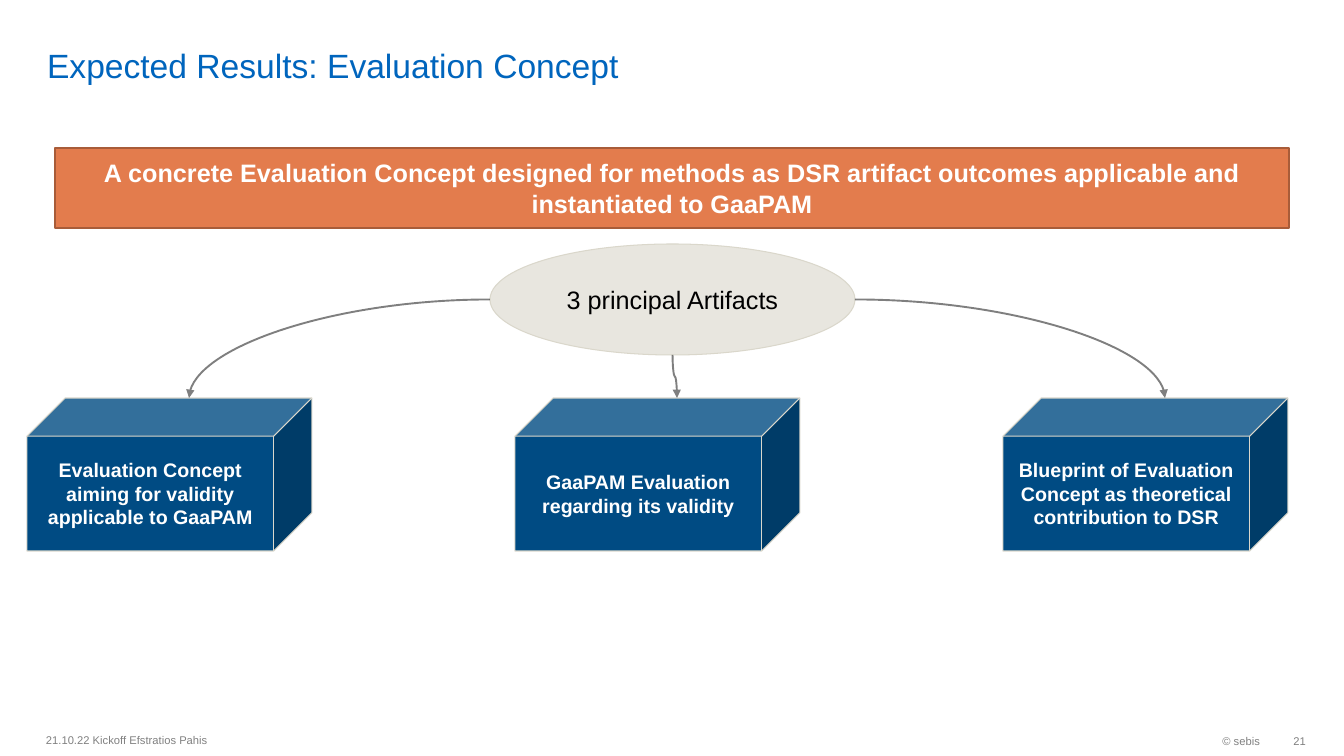
from lxml.etree import SubElement
from pptx import Presentation
from pptx.dml.color import RGBColor
from pptx.enum.shapes import MSO_CONNECTOR as Link, MSO_SHAPE as Preset
from pptx.enum.text import MSO_ANCHOR as Anchor, MSO_AUTO_SIZE as AutoSize, PP_ALIGN as Align
from pptx.oxml.ns import qn
from pptx.util import Emu, Pt

TITLE = "Expected Results: Evaluation Concept"
CLAIM = ("A concrete Evaluation Concept designed for methods as DSR artifact "
         "outcomes applicable and instantiated to GaaPAM")
HUB = "3 principal Artifacts"
ARTIFACTS = [
    "Evaluation Concept aiming for validity applicable to GaaPAM",
    "GaaPAM Evaluation regarding its validity",
    "Blueprint of Evaluation Concept as theoretical contribution to DSR",
]
# text, box (left, top, width, height), alignment, right inset
FOOTERS = [
    ("21.10.22 Kickoff Efstratios Pahis", (36, 724, 635, 32), Align.LEFT, 10),
    ("© sebis", (1034, 725, 236, 32), Align.RIGHT, 10),
    ("21", (1270, 725, 36, 32), Align.RIGHT, 0),
]

TITLE_BOX = (37, 5, 1167, 80)
CLAIM_BOX = (55, 148, 1234, 80)
HUB_BOX = (490, 244, 365, 111)
CUBE_LEFT, CUBE_TOP, CUBE_WIDTH, CUBE_HEIGHT = 27, 398, 285, 153
CUBE_STEP = 488
CUBE_TIP = 162  # from a cube's left edge to the middle of its top face
EMU_PER_PX = 914400 / 100.8


def px(*lengths):
    return [Emu(round(length * EMU_PER_PX)) for length in lengths]


def color(code):
    return RGBColor.from_string(code)


def write(frame, text, size, code, align, anchor, bold=False):
    frame.word_wrap = True
    frame.auto_size = AutoSize.NONE
    frame.vertical_anchor = anchor
    paragraph = frame.paragraphs[0]
    paragraph.alignment = align
    run = paragraph.add_run()
    run.text = text
    run.font.name = "Arial"
    run.font.size = Pt(size)
    run.font.bold = bold
    run.font.color.rgb = color(code)


def add_block(preset, box, fill, line, weight, text, size, code, bold):
    block = slide.shapes.add_shape(preset, *px(*box))
    block.shadow.inherit = False
    block.fill.solid()
    block.fill.fore_color.rgb = color(fill)
    block.line.color.rgb = color(line)
    block.line.width = Pt(weight)
    write(block.text_frame, text, size, code, Align.CENTER, Anchor.MIDDLE, bold)


def add_arrow(start, end):
    """Draw a curved, half-transparent arrow and return its connector."""
    arrow = slide.shapes.add_connector(Link.CURVE, *px(*start, *end))
    arrow.line.width = Pt(1.35)
    arrow.line.color.rgb = color("000000")
    properties = arrow._element.spPr
    SubElement(properties.find(".//" + qn("a:srgbClr")), qn("a:alpha"), val="50000")
    SubElement(properties.find(qn("a:ln")), qn("a:tailEnd"), type="triangle")
    SubElement(properties, qn("a:effectLst"))
    return arrow


def add_quarter_arrow(start, end):
    """Leave sideways and arrive from above."""
    arrow = add_arrow(start, end)
    arrow._element.spPr.find(qn("a:prstGeom")).set("prst", "curvedConnector2")


def add_drop_arrow(start, end):
    """Leave downwards and arrive from above: a sideways curve turned upright."""
    (x1, y1), (x2, y2) = start, end
    mid_x, mid_y = (x1 + x2) / 2, (y1 + y2) / 2
    half_run, half_rise = (y2 - y1) / 2, (x2 - x1) / 2
    arrow = add_arrow((mid_x + half_run, mid_y - half_rise),
                      (mid_x - half_run, mid_y + half_rise))
    arrow._element.spPr.find(qn("a:xfrm")).set("rot", str(270 * 60000))


deck = Presentation()
deck.slide_width, deck.slide_height = px(1344, 756)
slide = deck.slides.add_slide(deck.slide_layouts[5])

title = slide.shapes.title
title.left, title.top, title.width, title.height = px(*TITLE_BOX)
write(title.text_frame, TITLE, 24, "0065BD", Align.LEFT, Anchor.BOTTOM)
title.text_frame.margin_top = title.text_frame.margin_bottom = 0

for text, box, align, inset in FOOTERS:
    footer = slide.shapes.add_textbox(*px(*box)).text_frame
    write(footer, text, 8, "808080", align, Anchor.MIDDLE)
    footer.margin_right = px(inset)[0]

cube_lefts = [CUBE_LEFT + i * CUBE_STEP for i in range(len(ARTIFACTS))]
for left, artifact in zip(cube_lefts, ARTIFACTS):
    add_block(Preset.CUBE, (left, CUBE_TOP, CUBE_WIDTH, CUBE_HEIGHT),
              "004B83", "DAD7CB", 0.75, artifact, 14, "FFFFFF", True)

add_block(Preset.RECTANGLE, CLAIM_BOX, "E37C4D", "A85C39", 0.85, CLAIM, 18, "FFFFFF", True)
add_block(Preset.OVAL, HUB_BOX, "E8E6DF", "DAD7CB", 0.75, HUB, 18, "000000", False)

hub_left, hub_top, hub_width, hub_height = HUB_BOX
hub_middle = hub_top + hub_height / 2
left_tip, middle_tip, right_tip = [(left + CUBE_TIP, CUBE_TOP) for left in cube_lefts]
add_quarter_arrow((hub_left, hub_middle), left_tip)
add_quarter_arrow((hub_left + hub_width, hub_middle), right_tip)
add_drop_arrow((hub_left + hub_width / 2, hub_top + hub_height), middle_tip)

deck.save("out.pptx")
